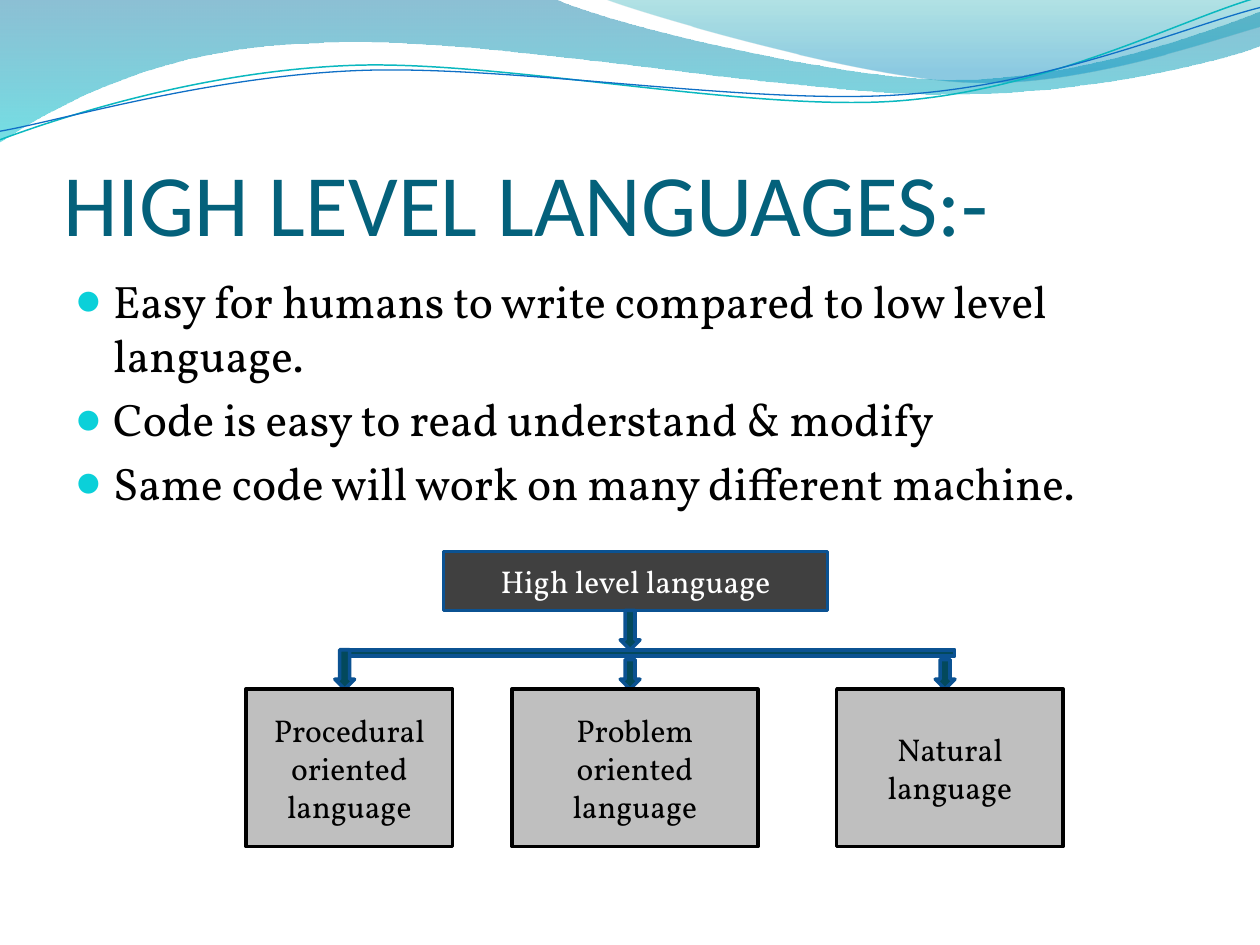
from dataclasses import dataclass
from lxml import etree
from pptx import Presentation
from pptx.dml.color import RGBColor
from pptx.enum.shapes import MSO_SHAPE
from pptx.enum.text import MSO_ANCHOR, MSO_AUTO_SIZE, PP_ALIGN
from pptx.oxml.ns import qn
from pptx.util import Pt

RECTANGLE, DOWN_ARROW = MSO_SHAPE.RECTANGLE, MSO_SHAPE.DOWN_ARROW
BOTTOM, MIDDLE = MSO_ANCHOR.BOTTOM, MSO_ANCHOR.MIDDLE
LEFT, CENTER = PP_ALIGN.LEFT, PP_ALIGN.CENTER


@dataclass(frozen=True)
class Theme:
    title_font: str = "Calibri"
    body_font: str = "Vollkorn"
    title_size: float = 50
    body_size: float = 26
    label_size: float = 18
    title: str = "04617B"
    text: str = "000000"
    bullet: str = "0BD0D9"
    root_fill: str = "404040"
    root_text: str = "FFFFFF"
    leaf_fill: str = "BFBFBF"
    leaf_line: str = "000000"
    arrow_fill: str = "03495C"
    blue_line: str = "0B5292"
    band_blue: str = "0074A1"
    band_cyan: str = "00C6CF"
    corner_teal: str = "00A1A9"
    corner_blue: str = "008BBF"
    wave_teal: str = "0AB8BF"
    wave_blue: str = "0F6FC6"


THEME = Theme()


def add_span(para, text, font, size, color):
    span = para.add_run()
    span.text = text
    span.font.name = font
    span.font.size = Pt(size)
    span.font.color.rgb = RGBColor.from_string(color)


def add_curve(shapes, start, pieces, closed):
    """Draw a freeform; a piece is a line end (x, y) or a Bezier (x1, y1, x2, y2, x, y)."""
    points = [(Pt(piece[i]), Pt(piece[i + 1])) for piece in pieces
              for i in range(0, len(piece), 2)]
    builder = shapes.build_freeform(Pt(start[0]), Pt(start[1]))
    builder.add_line_segments(points, close=closed)
    curve = builder.convert_to_shape()
    curve.shadow.inherit = False
    segments = iter(list(curve.element.iter(qn("a:lnTo"))))
    for piece in pieces:
        segment = next(segments)
        if len(piece) == 6:
            segment.tag = qn("a:cubicBezTo")
            for _ in range(2):
                extra = next(segments)
                segment.append(extra[0])
                extra.getparent().remove(extra)
    return curve


deck = Presentation()
deck.slide_width, deck.slide_height = Pt(720), Pt(540)
page = deck.slides.add_slide(deck.slide_layouts[5])
shapes = page.shapes

# Wave bands: start, pieces, gradient stops (position, colour, opacity %)
bands = [
    ((0, 0),
     [(316.8, -0.7), (342.7, 12.2, 478.1, 45.4, 545.8, 45.4),
      (614.2, 45.4, 689.8, 18.7, 720, 6.5), (720.7, 25.9),
      (707.8, 31.7, 626.4, 54.7, 537.1, 54), (447.8, 54, 275, 20.2, 185, 24.5),
      (92.2, 25.9, 33.1, 59.8, -0.7, 81.4), (0, 0)],
     [(0, THEME.band_blue, 45), (1, THEME.band_cyan, 55)]),
    ((344.9, -0.7),
     [(366.5, 7.9, 491, 44.6, 553.7, 46.8), (616.3, 49.7, 691.9, 23, 720, 15.1),
      (720, 0), (344.9, -0.7)],
     [(0, THEME.corner_teal, 30), (0.8, THEME.corner_blue, 45)]),
]
for start, pieces, stops in bands:
    band = add_curve(shapes, start, pieces, True)
    band.line.fill.background()
    band.fill.gradient()
    band.fill.gradient_angle = 270
    for stop, (position, color, opacity) in zip(band.fill.gradient_stops, stops):
        stop.position = position
        stop.color.rgb = RGBColor.from_string(color)
    for node, (position, color, opacity) in zip(band.element.spPr.iter(qn("a:srgbClr")), stops):
        etree.SubElement(node, qn("a:alpha"), val=str(opacity * 1000))

# Wave lines, tilted together
waves = [
    ((-1.4, 62.9),
     [(33.8, 51.7, 114.1, 29.4, 199.8, 29.9), (284.9, 30.3, 425.8, 67.3, 512.4, 64.9),
      (599, 62.4, 676.5, 25.7, 720.2, 15.6)], THEME.wave_teal, 0.85),
    ((-1.1, 58),
     [(32.9, 53.8, 118.3, 32.5, 204.1, 33), (290.6, 33.4, 428.9, 63.8, 515.5, 61.4),
      (601.3, 59.6, 678.4, 30.1, 721.4, 21.3)], THEME.wave_blue, 0.75),
]
for start, pieces, color, width in waves:
    wave = add_curve(shapes, start, pieces, False)
    wave.rotation = 357.3
    wave.fill.background()
    wave.line.color.rgb = RGBColor.from_string(color)
    wave.line.width = Pt(width)

# Title
title = shapes.title
title.left, title.top, title.width, title.height = Pt(36), Pt(55.3), Pt(648), Pt(90)
frame = title.text_frame
frame.auto_size = MSO_AUTO_SIZE.NONE
frame.word_wrap = True
frame.vertical_anchor = BOTTOM
frame.margin_left = frame.margin_right = frame.margin_bottom = 0
frame.margin_top = Pt(3.6)
frame.paragraphs[0].alignment = LEFT
add_span(frame.paragraphs[0], "HIGH LEVEL LANGUAGES:-",
         THEME.title_font, THEME.title_size, THEME.title)

# Bullets
bullets = [
    "Easy for humans to write compared to low level language.",
    "Code is easy to read understand & modify",
    "Same code will work on many different machine.",
]
frame = shapes.add_textbox(Pt(36), Pt(152.4), Pt(648), Pt(345.6)).text_frame
frame.word_wrap = True
for index, text in enumerate(bullets):
    para = frame.add_paragraph() if index else frame.paragraphs[0]
    para.space_before = Pt(0.2 * THEME.body_size)
    properties = para._p.get_or_add_pPr()
    properties.set("marL", str(Pt(21.6)))
    properties.set("indent", str(Pt(-21.6)))
    bullet_color = etree.SubElement(properties, qn("a:buClr"))
    etree.SubElement(bullet_color, qn("a:srgbClr"), val=THEME.bullet)
    etree.SubElement(properties, qn("a:buSzPct"), val="95000")
    etree.SubElement(properties, qn("a:buFont"), typeface=THEME.title_font)
    etree.SubElement(properties, qn("a:buChar"), char="●")
    add_span(para, text, THEME.body_font, THEME.body_size, THEME.text)

# Tree diagram: kind, left, top, width, height, fill, line, label, label colour
root = (THEME.root_fill, THEME.blue_line)
link = (THEME.arrow_fill, THEME.blue_line, "", THEME.text)
leaf = (THEME.leaf_fill, THEME.leaf_line)
parts = [
    (RECTANGLE, 253.3, 315.2, 219.6, 33.8, *root, "High level language", THEME.root_text),
    (DOWN_ARROW, 354.4, 348.8, 11.3, 22.5, *link),
    (RECTANGLE, 196.9, 371.3, 348.7, 3.6, *link),
    (DOWN_ARROW, 534.4, 376.9, 11.3, 16.9, *link),
    (DOWN_ARROW, 354.4, 376.9, 11.3, 16.9, *link),
    (DOWN_ARROW, 191.3, 371.3, 11.3, 22.5, *link),
]
for left, width, label in [(140.6, 118.1, "Procedural oriented language"),
                           (292.5, 140.6, "Problem oriented language"),
                           (478.1, 129.4, "Natural language")]:
    parts.append((RECTANGLE, left, 393.8, width, 90, *leaf, label, THEME.text))

for kind, left, top, width, height, fill, line, label, label_color in parts:
    box = shapes.add_shape(kind, Pt(left), Pt(top), Pt(width), Pt(height))
    box.shadow.inherit = False
    box.fill.solid()
    box.fill.fore_color.rgb = RGBColor.from_string(fill)
    box.line.color.rgb = RGBColor.from_string(line)
    box.line.width = Pt(2)
    if label:
        box.text_frame.word_wrap = True
        box.text_frame.vertical_anchor = MIDDLE
        para = box.text_frame.paragraphs[0]
        para.alignment = CENTER
        add_span(para, label, THEME.body_font, THEME.label_size, label_color)

deck.save("out.pptx")
